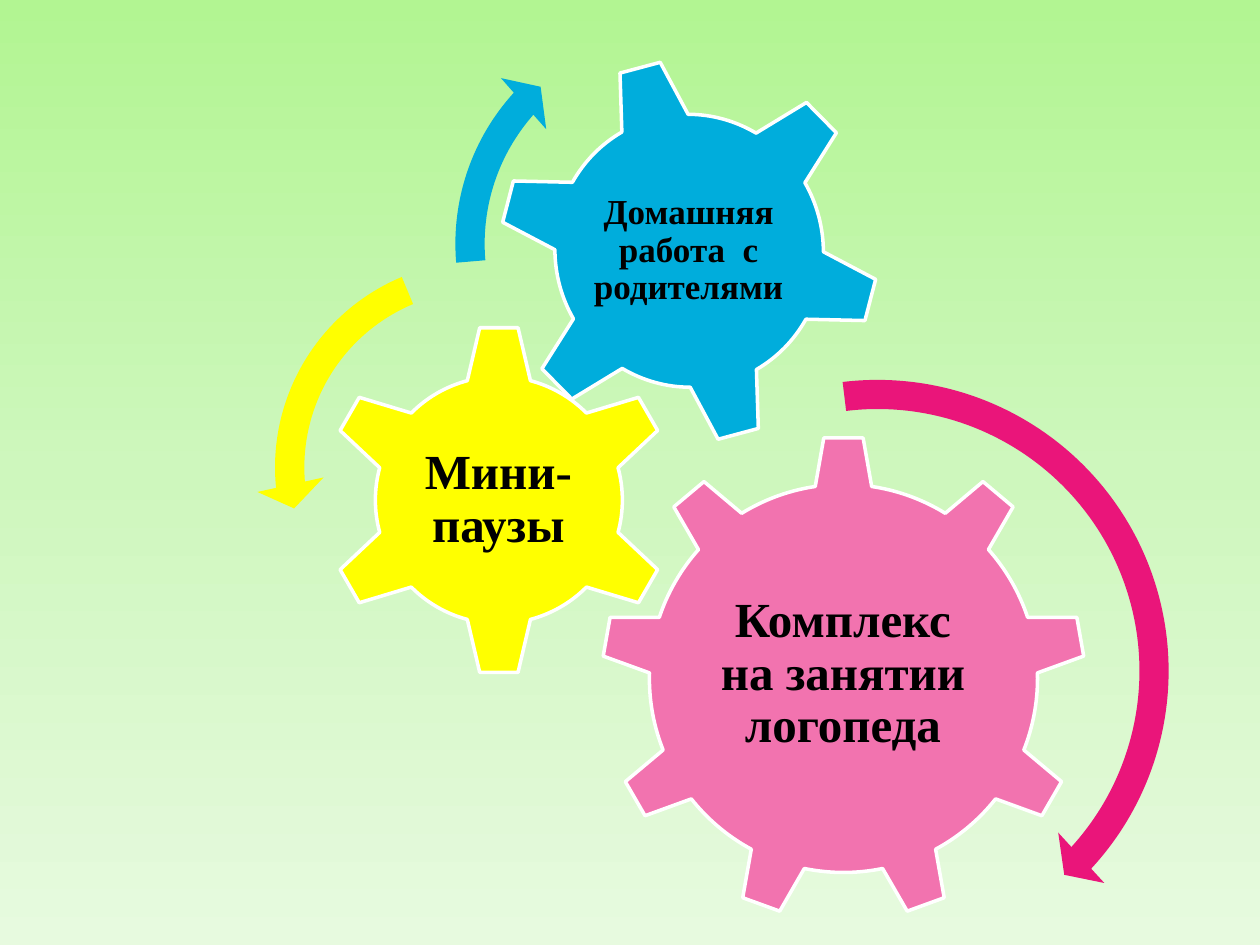
from copy import deepcopy

from pptx import Presentation
from pptx.dml.color import RGBColor
from pptx.enum.shapes import MSO_SHAPE
from pptx.enum.text import MSO_ANCHOR, PP_ALIGN
from pptx.oxml.ns import qn
from pptx.util import Pt

COLORS = {
    "sky top": "B2F592", "sky middle": "CEF7BD", "sky bottom": "E7FADF",
    "pink": "F273AF", "magenta": "EA157A", "yellow": "FFFF00",
    "blue": "00ADDC", "outline": "FFFFFF", "text": "000000",
}


def rgb(name):
    return RGBColor.from_string(COLORS[name])


def add_part(kind, box, color):
    part = slide.shapes.add_shape(kind, *[Pt(length) for length in box])
    part.shadow.inherit = False
    part.fill.solid()
    part.fill.fore_color.rgb = rgb(color)
    return part


prs = Presentation()
prs.slide_width, prs.slide_height = Pt(720), Pt(540)
slide = prs.slides.add_slide(prs.slide_layouts[6])

# Background: three-step vertical gradient
backdrop = slide.background.fill
backdrop.gradient()
backdrop.gradient_angle = 270
stop_list = next(slide.element.iter(qn("a:gsLst")))
stop_list.insert(1, deepcopy(stop_list[0]))
sky = [(0, "sky top"), (0.5, "sky middle"), (1, "sky bottom")]
for stop, (position, color) in zip(backdrop.gradient_stops, sky):
    stop.position = position
    stop.color.rgb = rgb(color)

# Gears: kind, box, rotation, colour, label, label box, font size, inset
gears = [
    (MSO_SHAPE.GEAR_9, (343.4, 249.1, 277.2, 277.2), 0, "pink",
     "Комплекс на занятии логопеда", (398.9, 313.9, 165.6, 142.6), 28, 2.8),
    (MSO_SHAPE.GEAR_6, (184.3, 185, 201.6, 201.6), 0, "yellow",
     "Мини-паузы", (234.7, 236.2, 100.1, 99.4), 28, 2.8),
    (MSO_SHAPE.GEAR_6, (284.4, 32.4, 218.9, 221.8), 345, "blue",
     "Домашняя работа  с родителями", (331.9, 81.4, 123.1, 123.8), 20, 2),
]
for kind, box, rotation, color, label, label_box, size, inset in gears:
    gear = add_part(kind, box, color)
    gear.rotation = rotation
    gear.line.color.rgb = rgb("outline")
    gear.line.width = Pt(2)

    caption = slide.shapes.add_textbox(*[Pt(length) for length in label_box])
    frame = caption.text_frame
    frame.word_wrap = True
    frame.vertical_anchor = MSO_ANCHOR.MIDDLE
    frame.margin_left = frame.margin_right = Pt(inset)
    frame.margin_top = frame.margin_bottom = Pt(inset)
    paragraph = frame.paragraphs[0]
    paragraph.alignment = PP_ALIGN.CENTER
    paragraph.line_spacing = 0.9
    run = paragraph.add_run()
    run.text = label
    run.font.name = "Times New Roman"
    run.font.size = Pt(size)
    run.font.bold = True
    run.font.color.rgb = rgb("text")

# Rotation arrows: kind, left, top, side, colour, adjustments
arrows = [
    (MSO_SHAPE.CIRCULAR_ARROW, 324, 205.9, 355, "magenta",
     (0.047, 2.99, 25.521, 157.86, 0.055)),
    (MSO_SHAPE.LEFT_CIRCULAR_ARROW, 146.2, 138.2, 257.8, "yellow",
     (0.065, 4.3, 104.891, 148.378, 0.075)),
    (MSO_SHAPE.CIRCULAR_ARROW, 249.1, 0, 278.6, "blue",
     (0.06, 3.941, 133.138, 105.082, 0.07)),
]
for kind, left, top, side, color, adjustments in arrows:
    arrow = add_part(kind, (left, top, side, side), color)
    arrow.line.fill.background()
    for index, value in enumerate(adjustments):
        arrow.adjustments[index] = value

prs.save("out.pptx")
